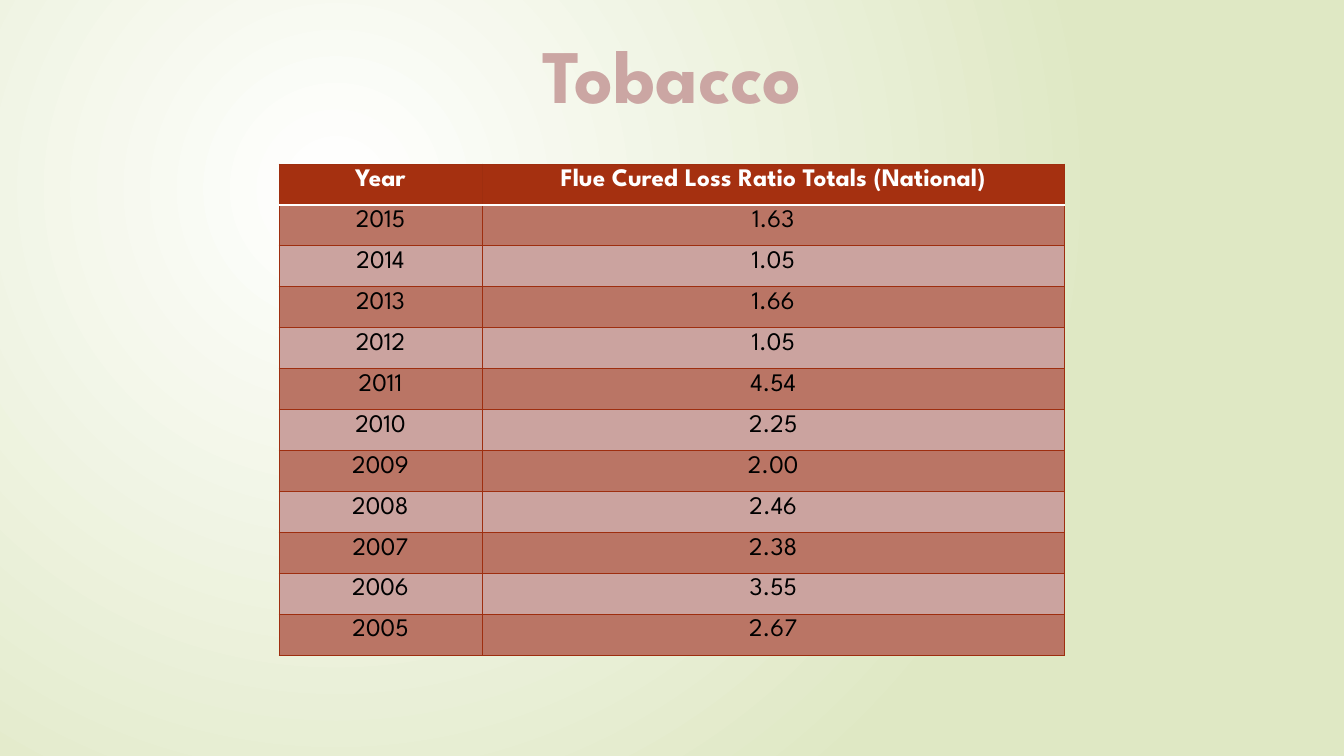
from lxml import etree
from pptx import Presentation
from pptx.dml.color import RGBColor
from pptx.enum.text import PP_ALIGN
from pptx.oxml.ns import qn
from pptx.util import Pt

CENTER = PP_ALIGN.CENTER

TITLE = "Tobacco"
ROWS = [
    ("Year", "Flue Cured Loss Ratio Totals (National)"),
    ("2015", "1.63"),
    ("2014", "1.05"),
    ("2013", "1.66"),
    ("2012", "1.05"),
    ("2011", "4.54"),
    ("2010", "2.25"),
    ("2009", "2.00"),
    ("2008", "2.46"),
    ("2007", "2.38"),
    ("2006", "3.55"),
    ("2005", "2.67"),
]

THEME = {
    "font": "League Spartan",
    "title_size": 54,
    "table_size": 18,
    "title": "CBA6A3",
    "glow": "FFFFFF",
    "edge": "DFE8C4",
    "header": "A53010",
    "header_text": "FFFFFF",
    "header_rule": "FFFFFF",
    "body_text": "000000",
    "bands": ("CBA39F", "BA7565"),
    "border": "9E2E0F",
}

SLIDE_WIDTH, SLIDE_HEIGHT = 960, 540
TITLE_TOP, TITLE_HEIGHT = 16.56, 72.72
TABLE_LEFT, TABLE_TOP = 199.3, 117.2
COLUMN_WIDTHS = (145, 416)
ROW_HEIGHT = 29.23
BORDER_WIDTH, HEADER_RULE_WIDTH = 0.75, 1.25


def color(name):
    return RGBColor.from_string(name)


def style_text(text_frame, size, text_color, bold):
    paragraph = text_frame.paragraphs[0]
    paragraph.alignment = CENTER
    font = paragraph.runs[0].font
    font.name = THEME["font"]
    font.size = Pt(size)
    font.bold = bold
    font.color.rgb = color(text_color)


def paint_background(slide):
    """Radial gradient centred a quarter of the way across and down."""
    fill = slide.background.fill
    fill.gradient()
    for stop, position, name in zip(fill.gradient_stops, (0, 1), ("glow", "edge")):
        stop.position = position
        stop.color.rgb = color(THEME[name])
    gradient = slide.element.find(".//" + qn("a:gradFill"))
    gradient.remove(gradient.find(qn("a:lin")))
    circle = etree.SubElement(gradient, qn("a:path"), {"path": "circle"})
    etree.SubElement(circle, qn("a:fillToRect"),
                     {"l": "50000", "t": "50000", "r": "100000", "b": "100000"})


def set_borders(cell, row_index):
    """Border lines must precede the fill in the cell properties."""
    properties = cell._tc.get_or_add_tcPr()
    for index, side in enumerate("LRTB"):
        is_header_rule = (row_index, side) in ((0, "B"), (1, "T"))
        width = HEADER_RULE_WIDTH if is_header_rule else BORDER_WIDTH
        name = THEME["header_rule" if is_header_rule else "border"]
        line = etree.Element(qn(f"a:ln{side}"), {"w": str(int(Pt(width)))})
        solid = etree.SubElement(line, qn("a:solidFill"))
        etree.SubElement(solid, qn("a:srgbClr"), {"val": name})
        properties.insert(index, line)


def add_title(slide):
    box = slide.shapes.add_textbox(0, Pt(TITLE_TOP), Pt(SLIDE_WIDTH), Pt(TITLE_HEIGHT))
    box.text_frame.word_wrap = True
    box.text_frame.text = TITLE
    style_text(box.text_frame, THEME["title_size"], THEME["title"], True)


def add_loss_table(slide):
    table = slide.shapes.add_table(
        len(ROWS), len(COLUMN_WIDTHS), Pt(TABLE_LEFT), Pt(TABLE_TOP),
        Pt(sum(COLUMN_WIDTHS)), Pt(ROW_HEIGHT * len(ROWS))).table
    for column, width in zip(table.columns, COLUMN_WIDTHS):
        column.width = Pt(width)
    for row_index, values in enumerate(ROWS):
        table.rows[row_index].height = Pt(ROW_HEIGHT)
        is_header = row_index == 0
        fill_color = THEME["header"] if is_header else THEME["bands"][row_index % 2]
        text_color = THEME["header_text" if is_header else "body_text"]
        for column_index, value in enumerate(values):
            cell = table.cell(row_index, column_index)
            cell.text_frame.text = value
            style_text(cell.text_frame, THEME["table_size"], text_color, is_header)
            cell.fill.solid()
            cell.fill.fore_color.rgb = color(fill_color)
            set_borders(cell, row_index)


def main():
    presentation = Presentation()
    presentation.slide_width = Pt(SLIDE_WIDTH)
    presentation.slide_height = Pt(SLIDE_HEIGHT)
    slide = presentation.slides.add_slide(presentation.slide_layouts[6])
    paint_background(slide)
    add_title(slide)
    add_loss_table(slide)
    presentation.save("out.pptx")


if __name__ == "__main__":
    main()
